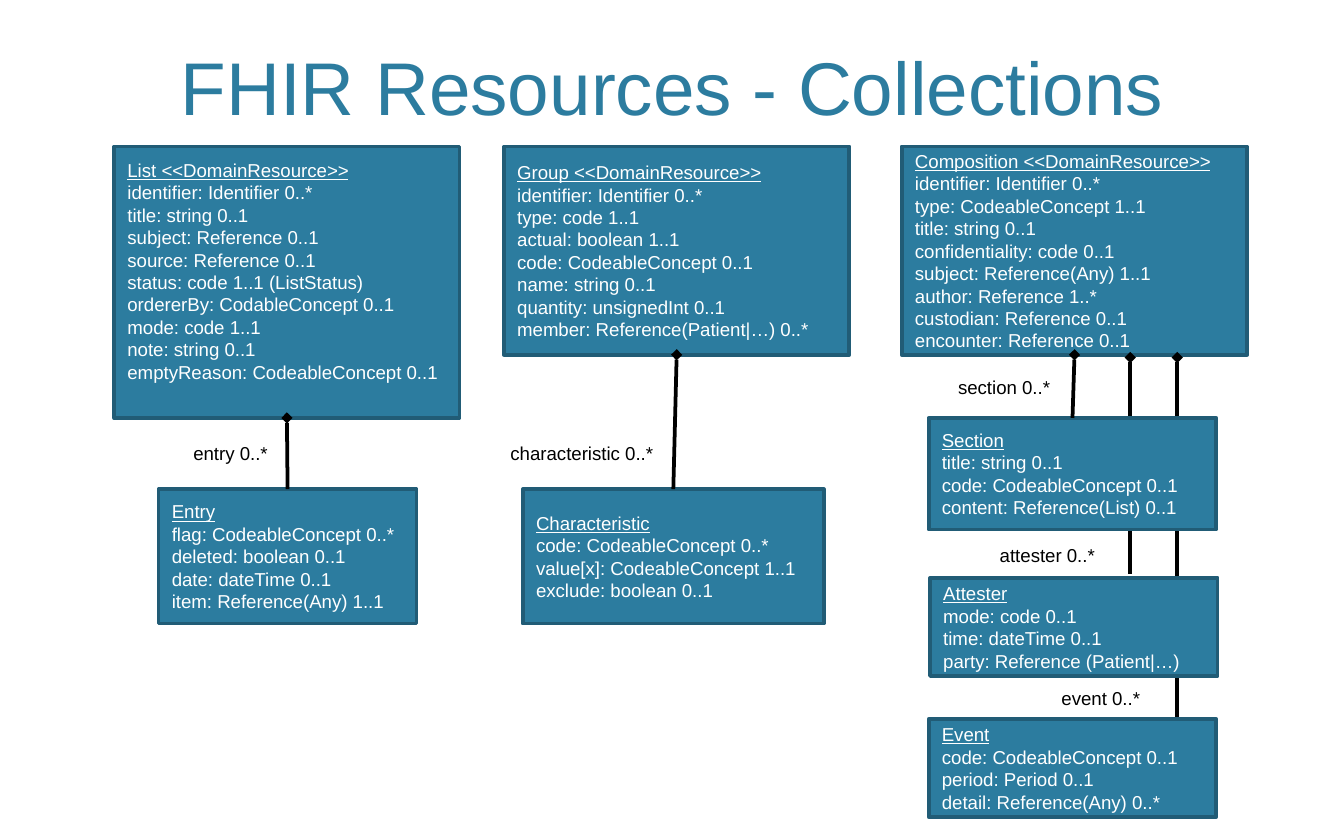
import pptx
import pptx.util
import pptx.dml.color
import pptx.enum.shapes
import pptx.enum.text
import pptx.oxml
import pptx.oxml.ns

PX = 9144
BLUE = "2C7C9F"
DARK_BLUE = "215C76"
WHITE = "FFFFFF"
BLACK = "000000"
TOP_ROW = 109
CHILD_ROW = 364
RESOURCE_WIDTH = 257
PART_WIDTH = 214


def px(length):
    return pptx.util.Emu(length * PX)


def color(value):
    return pptx.dml.color.RGBColor.from_string(value)


class Diagram:
    font = "Arial"
    text_size = 10
    line_width = 2

    def __init__(self, slide):
        self.slide = slide

    def format_runs(self, paragraph, size, value, underline=False):
        for run in paragraph.runs:
            run.font.name = self.font
            run.font.size = pptx.util.Pt(size)
            run.font.color.rgb = color(value)
            run.font.underline = underline

    def title(self, text, left, top, width, height):
        shape = self.slide.shapes.add_textbox(px(left), px(top), px(width), px(height))
        frame = shape.text_frame
        frame.word_wrap = True
        frame.vertical_anchor = pptx.enum.text.MSO_ANCHOR.BOTTOM
        frame.text = text
        paragraph = frame.paragraphs[0]
        paragraph.alignment = pptx.enum.text.PP_ALIGN.CENTER
        self.format_runs(paragraph, 40, BLUE)

    def label(self, text, left, top, width):
        shape = self.slide.shapes.add_textbox(px(left), px(top), px(width), px(27))
        frame = shape.text_frame
        frame.word_wrap = False
        frame.auto_size = pptx.enum.text.MSO_AUTO_SIZE.SHAPE_TO_FIT_TEXT
        frame.text = text
        self.format_runs(frame.paragraphs[0], self.text_size, BLACK)

    def box(self, left, top, width, height, name, fields, bottom_inset=5):
        shape = self.slide.shapes.add_shape(
            pptx.enum.shapes.MSO_SHAPE.RECTANGLE, px(left), px(top), px(width), px(height))
        shape.shadow.inherit = False
        shape.fill.solid()
        shape.fill.fore_color.rgb = color(BLUE)
        shape.line.color.rgb = color(DARK_BLUE)
        shape.line.width = pptx.util.Pt(self.line_width)
        frame = shape.text_frame
        frame.word_wrap = True
        frame.vertical_anchor = pptx.enum.text.MSO_ANCHOR.MIDDLE
        frame.margin_bottom = px(bottom_inset)
        frame.text = "\n".join([name] + fields)
        for index, paragraph in enumerate(frame.paragraphs):
            paragraph.alignment = pptx.enum.text.PP_ALIGN.LEFT
            self.format_runs(paragraph, self.text_size, WHITE, underline=index == 0)
        return shape

    def line(self, x, bottom, top):
        connector = self.slide.shapes.add_connector(
            pptx.enum.shapes.MSO_CONNECTOR.STRAIGHT, px(x), px(bottom), px(x), px(top))
        connector.line.color.rgb = color(BLACK)
        connector.line.width = pptx.util.Pt(self.line_width)
        outline = connector.line._get_or_add_ln()
        pptx.oxml.ns.qn("a:tailEnd")
        tail = outline.makeelement(pptx.oxml.ns.qn("a:tailEnd"), {"type": "diamond"})
        outline.append(tail)
        properties = connector._element.spPr
        properties.append(properties.makeelement(pptx.oxml.ns.qn("a:effectLst"), {}))
        return connector

    def join(self, part, whole):
        connector = self.line(0, 0, 0)
        connector.begin_connect(part, 0)
        connector.end_connect(whole, 2)


def main():
    presentation = pptx.Presentation()
    presentation.slide_width = px(1000)
    presentation.slide_height = px(625)
    slide = presentation.slides.add_slide(presentation.slide_layouts[6])
    diagram = Diagram(slide)

    diagram.title("FHIR Resources - Collections", 60, 10, 880, 92)

    list_box = diagram.box(85, TOP_ROW, RESOURCE_WIDTH, 202, "List <<DomainResource>>", [
        "identifier: Identifier 0..*",
        "title: string 0..1",
        "subject: Reference 0..1",
        "source: Reference 0..1",
        "status: code 1..1 (ListStatus)",
        "ordererBy: CodableConcept 0..1",
        "mode: code 1..1",
        "note: string 0..1",
        "emptyReason: CodeableConcept 0..1",
    ], bottom_inset=22)
    entry = diagram.box(118, CHILD_ROW, 192, 100, "Entry", [
        "flag: CodeableConcept 0..*",
        "deleted: boolean 0..1",
        "date: dateTime 0..1",
        "item: Reference(Any) 1..1",
    ])
    diagram.join(entry, list_box)
    diagram.label("entry 0..*", 134, 324, 80)

    group = diagram.box(375, TOP_ROW, RESOURCE_WIDTH, 155, "Group <<DomainResource>>", [
        "identifier: Identifier 0..*",
        "type: code 1..1",
        "actual: boolean 1..1",
        "code: CodeableConcept 0..1",
        "name: string 0..1",
        "quantity: unsignedInt 0..1",
        "member: Reference(Patient|…) 0..*",
    ])
    characteristic = diagram.box(389, CHILD_ROW, 224, 100, "Characteristic", [
        "code: CodeableConcept 0..*",
        "value[x]: CodeableConcept 1..1",
        "exclude: boolean 0..1",
    ])
    diagram.join(characteristic, group)
    diagram.label("characteristic 0..*", 370, 324, 134)

    composition = diagram.box(671, TOP_ROW, RESOURCE_WIDTH, 155, "Composition <<DomainResource>>", [
        "identifier: Identifier 0..*",
        "type: CodeableConcept 1..1",
        "title: string 0..1",
        "confidentiality: code 0..1",
        "subject: Reference(Any) 1..1",
        "author: Reference 1..*",
        "custodian: Reference 0..1",
        "encounter: Reference 0..1",
    ])
    diagram.line(841, 427, 266)
    diagram.line(876, 535, 266)
    section = diagram.box(691, 311, PART_WIDTH, 83, "Section", [
        "title: string 0..1",
        "code: CodeableConcept 0..1",
        "content: Reference(List) 0..1",
    ])
    diagram.box(692, 430, PART_WIDTH, 73, "Attester", [
        "mode: code 0..1",
        "time: dateTime 0..1",
        "party: Reference (Patient|…)",
    ])
    diagram.box(691, 535, PART_WIDTH, 73, "Event", [
        "code: CodeableConcept 0..1",
        "period: Period 0..1",
        "detail: Reference(Any) 0..*",
    ])
    diagram.join(section, composition)
    diagram.label("section 0..*", 703, 275, 92)
    diagram.label("attester 0..*", 734, 400, 98)
    diagram.label("event 0..*", 780, 506, 83)

    presentation.save("out.pptx")


if __name__ == "__main__":
    main()
